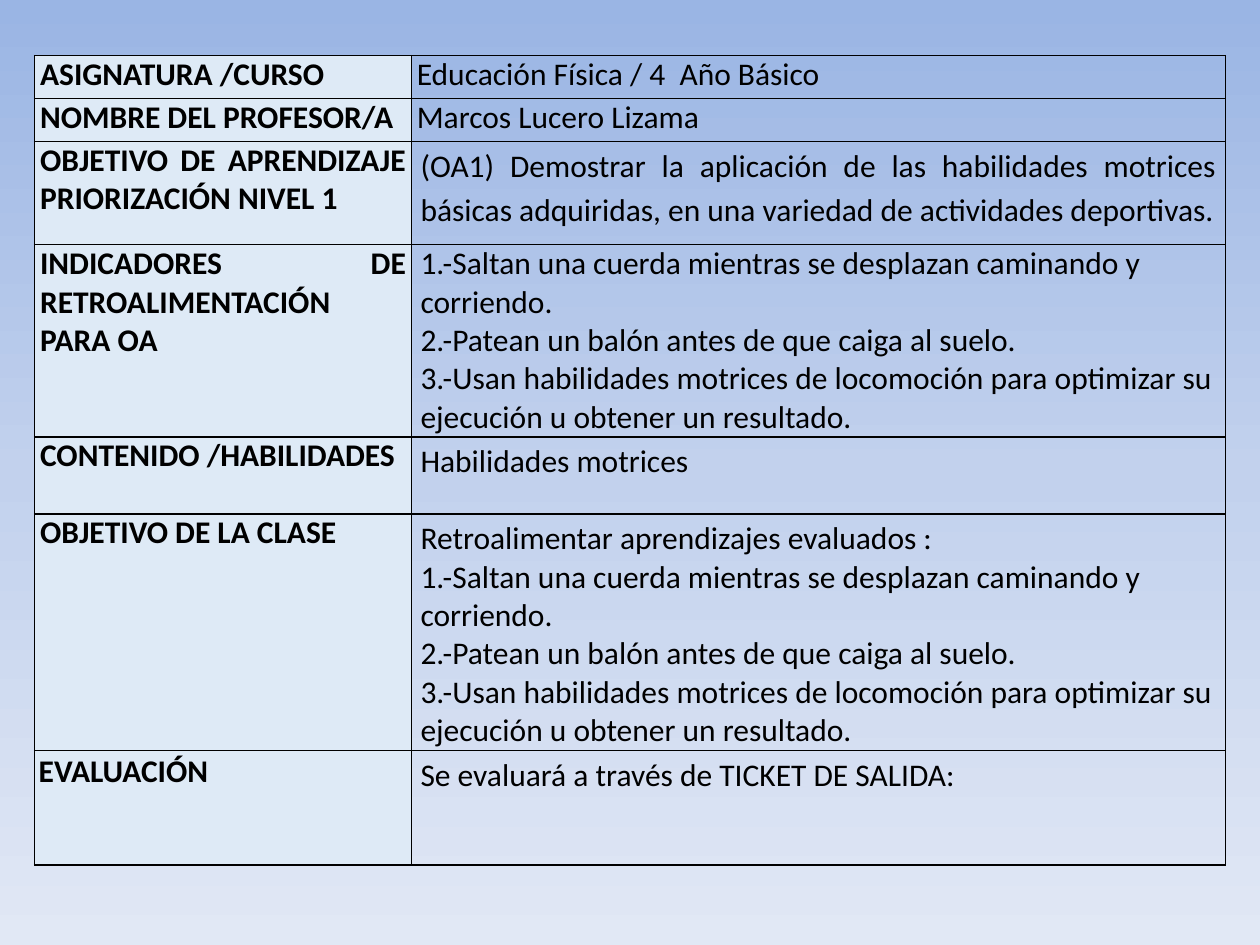
from copy import deepcopy
from lxml import etree
from pptx import Presentation
from pptx.dml.color import RGBColor
from pptx.enum import text
from pptx.oxml.ns import qn
from pptx.util import Pt

TASKS = [
    "1.-Saltan una cuerda mientras se desplazan caminando y corriendo.",
    "2.-Patean un balón antes de que caiga al suelo.",
    "3.-Usan habilidades motrices de locomoción para optimizar su ejecución u obtener un resultado.",
]
TIGHT, WIDE, LAST = (3.1, 0), (5.2, 0), (2.3, 1.4)
ROWS = [
    (24.5, "ASIGNATURA /CURSO", TIGHT, ["Educación Física / 4  Año Básico"], TIGHT),
    (24.5, "NOMBRE DEL PROFESOR/A", TIGHT, ["Marcos Lucero Lizama"], TIGHT),
    (59, "OBJETIVO DE APRENDIZAJE PRIORIZACIÓN NIVEL 1", TIGHT,
     ["(OA1) Demostrar la aplicación de las habilidades motrices básicas "
      "adquiridas, en una variedad de actividades deportivas."], WIDE),
    (99.5, "INDICADORES DE RETROALIMENTACIÓN PARA OA", TIGHT, TASKS, WIDE),
    (44, "CONTENIDO /HABILIDADES", TIGHT, ["Habilidades motrices"], WIDE),
    (119.5, "OBJETIVO DE LA CLASE", TIGHT,
     ["Retroalimentar aprendizajes evaluados :"] + TASKS, WIDE),
    (65.5, "EVALUACIÓN", LAST, ["Se evaluará a través de TICKET DE SALIDA:"], WIDE),
]
COLS = (215.3, 465.1)
LEFT, TOP = 19.8, 31.8
THEME = {
    "font": "Calibri", "size": 18, "ink": "000000", "label": "DEEAF6",
    "sky": [(0, "9AB5E4"), (0.5, "C2D1ED"), (1, "E1E8F5")],
    "lead": 1.15, "line": 1,
}


def color(name):
    return RGBColor.from_string(THEME[name])


def paint_sky(slide):
    fill = slide.background.fill
    fill.gradient()
    fill.gradient_angle = 270
    stops = slide.element.find(".//" + qn("a:gsLst"))
    stops.insert(1, deepcopy(stops[0]))
    for stop, (place, tone) in zip(fill.gradient_stops, THEME["sky"]):
        stop.position = place
        stop.color.rgb = RGBColor.from_string(tone)


def add_edges(cell):
    props = cell._tc.get_or_add_tcPr()
    for spot, side in enumerate(("lnL", "lnR", "lnT", "lnB")):
        edge = etree.Element(qn("a:" + side), w=str(Pt(THEME["line"])))
        fill = etree.SubElement(edge, qn("a:solidFill"))
        etree.SubElement(fill, qn("a:srgbClr"), val=THEME["ink"])
        props.insert(spot, edge)


def fill_cell(cell, lines, inset, bold):
    side, top = inset
    cell.margin_left = cell.margin_right = Pt(side)
    cell.margin_top = cell.margin_bottom = Pt(top)
    if bold:
        cell.fill.solid()
        cell.fill.fore_color.rgb = color("label")
    else:
        cell.fill.background()
    add_edges(cell)
    cell.text_frame.text = "\n".join(lines)
    for para in cell.text_frame.paragraphs:
        listed = para.text in TASKS
        para.alignment = text.PP_ALIGN.LEFT if listed else text.PP_ALIGN.JUSTIFY
        if inset == WIDE and not listed:
            para.line_spacing = THEME["lead"]
        for run in para.runs:
            run.font.name = THEME["font"]
            run.font.size = Pt(THEME["size"])
            run.font.bold = bold
            run.font.color.rgb = color("ink")


def main():
    deck = Presentation()
    deck.slide_width, deck.slide_height = Pt(720), Pt(540)
    slide = deck.slides.add_slide(deck.slide_layouts[6])
    paint_sky(slide)
    high = sum(row[0] for row in ROWS)
    table = slide.shapes.add_table(len(ROWS), len(COLS), Pt(LEFT), Pt(TOP),
                                   Pt(sum(COLS)), Pt(high)).table
    table.first_row = table.horz_banding = False
    for col, width in zip(table.columns, COLS):
        col.width = Pt(width)
    for row, (tall, label, near, lines, far) in zip(table.rows, ROWS):
        row.height = Pt(tall)
        fill_cell(row.cells[0], [label], near, True)
        fill_cell(row.cells[1], lines, far, False)
    deck.save("out.pptx")


if __name__ == "__main__":
    main()
